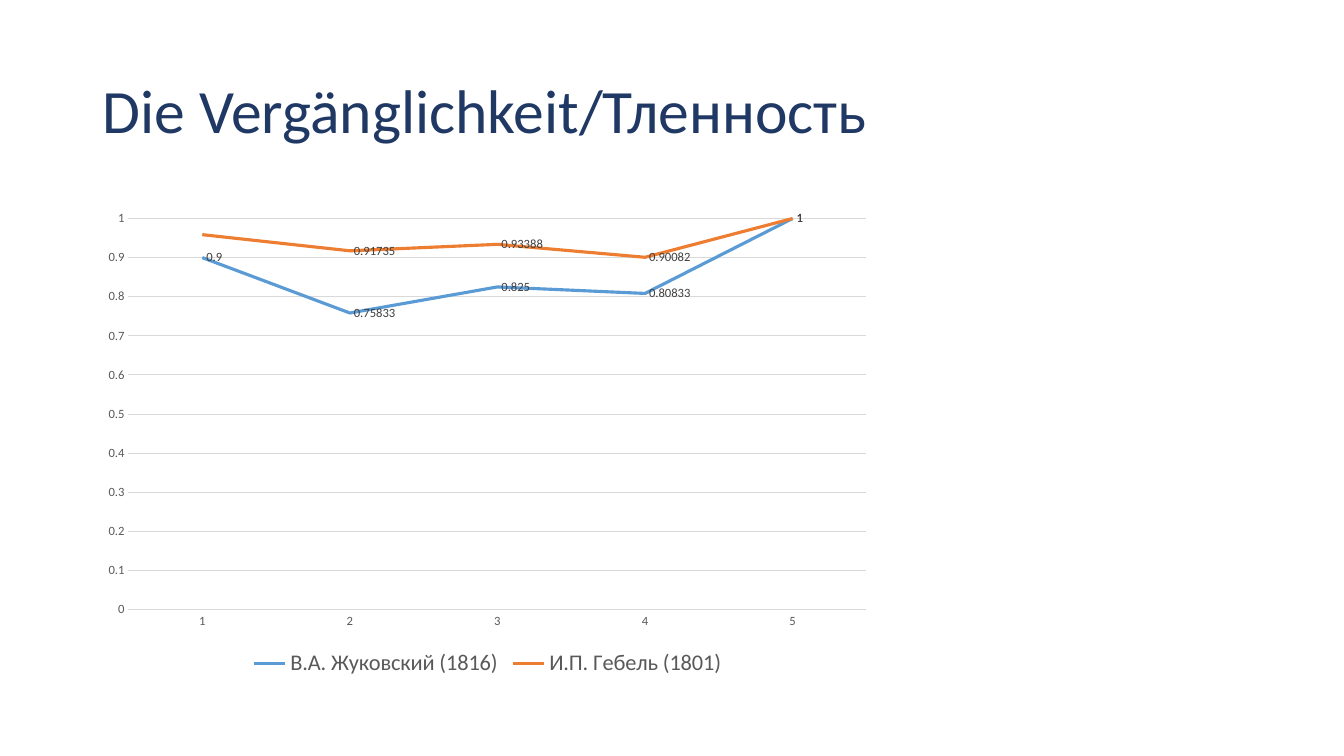
import pptx
import pptx.chart.data
import pptx.dml.color
import pptx.enum.chart
import pptx.enum.text
import pptx.util
from pptx.util import Inches

FONT = "Calibri"
GRID_COLOR = "D9D9D9"
TEXT_COLOR = "595959"
LABEL_COLOR = "404040"
CATEGORIES = ["1", "2", "3", "4", "5"]
SERIES = [
    ("В.А. Жуковский (1816)", [0.9, 0.75833, 0.825, 0.80833, 1], "5B9BD5"),
    ("И.П. Гебель (1801)", [0.95867, 0.91735, 0.93388, 0.90082, 1], "ED7D31"),
]


def rgb(color):
    """Return the colour object for a hex string."""
    return pptx.dml.color.RGBColor.from_string(color)


def style_font(font, size, color):
    """Apply the slide's typeface with a size and colour."""
    font.name = FONT
    font.size = pptx.util.Pt(size)
    font.color.rgb = rgb(color)


def style_line(line, color, width):
    """Give a line a solid colour and a width in points."""
    line.color.rgb = rgb(color)
    line.width = pptx.util.Pt(width)


def add_title(slide, left, top, width, height):
    """Place the heading in the title placeholder."""
    title = slide.shapes.title
    title.left, title.top, title.width, title.height = left, top, width, height
    frame = title.text_frame
    frame.text = "Die Vergänglichkeit/Тленность"
    frame.vertical_anchor = pptx.enum.text.MSO_ANCHOR.MIDDLE
    paragraph = frame.paragraphs[0]
    paragraph.alignment = pptx.enum.text.PP_ALIGN.LEFT
    paragraph.line_spacing = 0.9
    style_font(paragraph.font, 44, "203864")


def style_axes(chart):
    """Format both axes and the horizontal gridlines."""
    for axis in (chart.category_axis, chart.value_axis):
        axis.major_tick_mark = pptx.enum.chart.XL_TICK_MARK.NONE
        axis.minor_tick_mark = pptx.enum.chart.XL_TICK_MARK.NONE
        style_font(axis.tick_labels.font, 9, TEXT_COLOR)
    style_line(chart.category_axis.format.line, GRID_COLOR, 0.75)
    value_axis = chart.value_axis
    value_axis.minimum_scale = 0
    value_axis.maximum_scale = 1
    value_axis.major_unit = 0.1
    value_axis.format.line.fill.background()
    style_line(value_axis.major_gridlines.format.line, GRID_COLOR, 0.75)


def style_series(chart):
    """Colour the lines and label every point but the first of the second line."""
    right = pptx.enum.chart.XL_LABEL_POSITION.RIGHT
    for series, (_, _, color) in zip(chart.plots[0].series, SERIES):
        series.smooth = False
        style_line(series.format.line, color, 2.25)
        style_font(series.data_labels.font, 9, LABEL_COLOR)
    first, second = chart.plots[0].series
    first.data_labels.show_value = True
    first.data_labels.position = right
    second.data_labels.show_value = False
    for index in range(1, len(CATEGORIES)):
        label = second.points[index].data_label
        style_font(label.font, 9, LABEL_COLOR)
        label.position = right


def add_line_chart(slide, left, top, width, height):
    """Add the line chart with its legend below."""
    data = pptx.chart.data.CategoryChartData()
    data.categories = CATEGORIES
    for name, values, _ in SERIES:
        data.add_series(name, values)
    chart = slide.shapes.add_chart(
        pptx.enum.chart.XL_CHART_TYPE.LINE, left, top, width, height, data
    ).chart
    chart.has_title = False
    style_font(chart.font, 10, "000000")
    chart.has_legend = True
    chart.legend.position = pptx.enum.chart.XL_LEGEND_POSITION.BOTTOM
    chart.legend.include_in_layout = False
    style_font(chart.legend.font, 16, TEXT_COLOR)
    style_axes(chart)
    style_series(chart)


def main():
    """Build and save the slide."""
    presentation = pptx.Presentation()
    presentation.slide_width = Inches(13.33)
    presentation.slide_height = Inches(7.5)
    slide = presentation.slides.add_slide(presentation.slide_layouts[5])
    add_title(slide, Inches(0.92), Inches(0.4), Inches(11.5), Inches(1.45))
    add_line_chart(slide, Inches(0.92), Inches(2), Inches(7.83), Inches(4.76))
    presentation.save("out.pptx")


if __name__ == "__main__":
    main()
